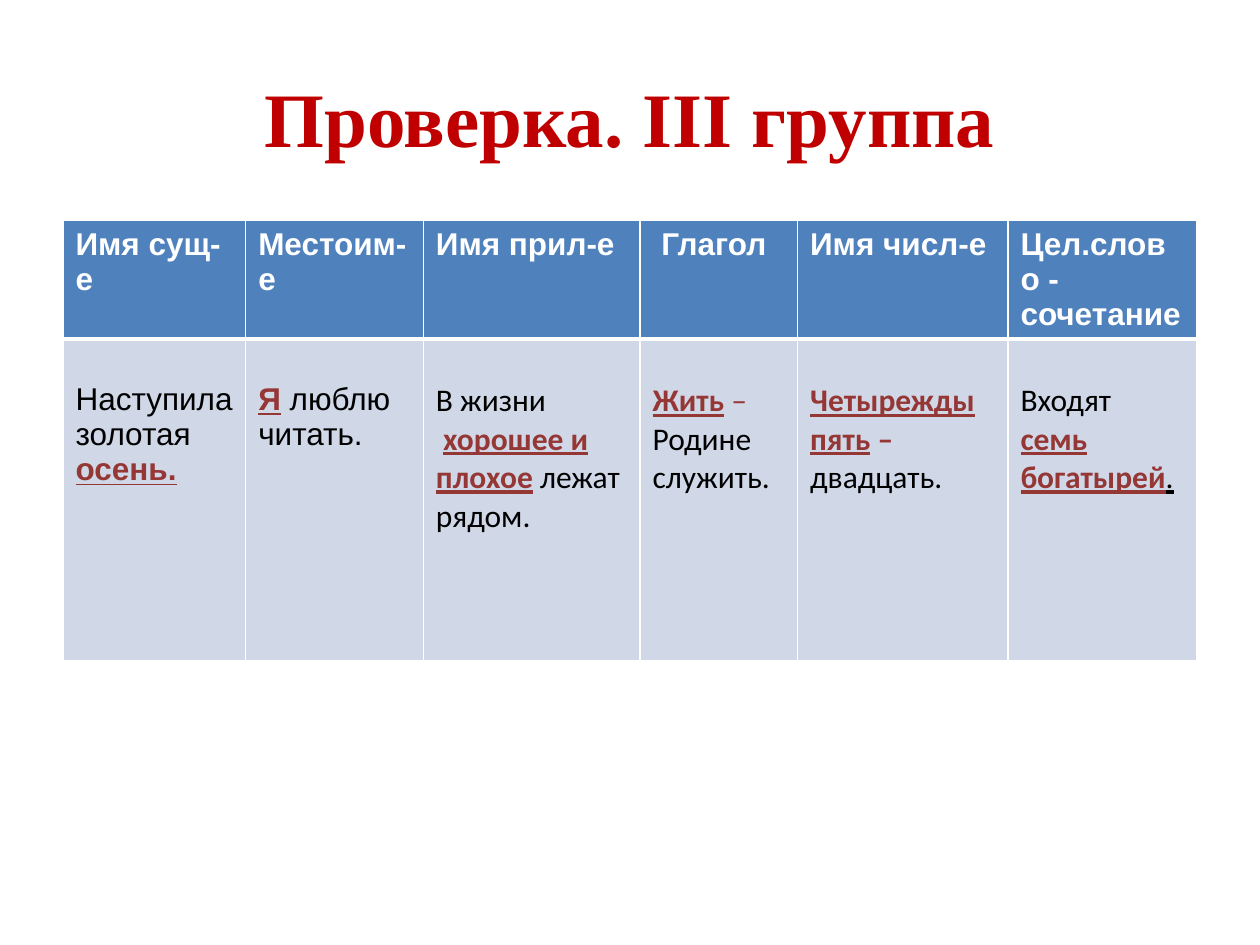
import pptx
import pptx.util
import pptx.dml.color
import pptx.enum.text
import pptx.oxml
import pptx.oxml.ns

RGB = pptx.dml.color.RGBColor
RED = RGB(0xC0, 0x00, 0x00)
BLUE = RGB(0x4F, 0x81, 0xBD)
PALE = RGB(0xD0, 0xD8, 0xE8)
WINE = RGB(0x95, 0x37, 0x35)
BLACK = RGB(0, 0, 0)
WHITE = RGB(0xFF, 0xFF, 0xFF)

PLAIN = dict(color=BLACK)
KEY = dict(color=WINE, bold=True, under=True)
BOLD = dict(color=WINE, bold=True)
THIN = dict(color=WINE)
LINE = dict(color=BLACK, under=True)

TITLE = "Проверка. III группа"
HEADS = ["Имя сущ-е", "Местоим-е", "Имя прил-е", " Глагол", "Имя числ-е",
         "Цел.слово -\nсочетание"]
BODY = [
    ("Arial", [("Наступила золотая ", PLAIN), ("осень.", KEY)]),
    ("Arial", [("Я", KEY), (" люблю читать.", PLAIN)]),
    ("Calibri", [("В жизни\n ", PLAIN), ("хорошее и плохое", KEY), (" лежат рядом.", PLAIN)]),
    ("Calibri", [("Жить", KEY), (" ", BOLD), ("– ", THIN), ("Родине служить.", PLAIN)]),
    ("Calibri", [("Четырежды пять", KEY), (" – ", BOLD), ("двадцать.", PLAIN)]),
    ("Calibri", [("Входят\n", PLAIN), ("семь богатырей", KEY), (".", LINE)]),
]
COLS = [1.45, 1.41, 1.72, 1.25, 1.67, 1.5]
ROWS = [0.94, 2.55]
LEFT, TOP, WIDTH = 0.5, 1.75, 9


def write(frame, text, font="Arial", size=18, color=BLACK, bold=False, under=False):
    """Add text to the last paragraph, starting a new one at each line break."""
    for num, part in enumerate(text.split("\n")):
        para = frame.add_paragraph() if num else frame.paragraphs[-1]
        if not part:
            continue
        run = para.add_run()
        run.text = part
        run.font.name = font
        run.font.size = pptx.util.Pt(size)
        run.font.color.rgb = color
        run.font.bold = bold
        run.font.underline = under


def paint(cell, fill, top, base):
    """Fill a cell and draw its white borders."""
    cell.fill.solid()
    cell.fill.fore_color.rgb = fill
    props = cell._tc.get_or_add_tcPr()
    for spot, (side, width) in enumerate(zip("LRTB", (1, 1, top, base))):
        props.insert(spot, pptx.oxml.parse_xml(
            f'<a:ln{side} {pptx.oxml.ns.nsdecls("a")} w="{pptx.util.Pt(width)}">'
            f'<a:solidFill><a:srgbClr val="{WHITE}"/></a:solidFill></a:ln{side}>'))


def main():
    """Build the slide."""
    inch = pptx.util.Inches
    deck = pptx.Presentation()
    deck.slide_width, deck.slide_height = inch(10), inch(7.5)
    slide = deck.slides.add_slide(deck.slide_layouts[5])

    title = slide.shapes.title
    title.left, title.top = inch(LEFT), inch(0.3)
    title.width, title.height = inch(WIDTH), inch(1.25)
    frame = title.text_frame
    frame.vertical_anchor = pptx.enum.text.MSO_ANCHOR.MIDDLE
    frame.paragraphs[0].alignment = pptx.enum.text.PP_ALIGN.CENTER
    write(frame, TITLE, font="Times New Roman", size=44, color=RED, bold=True)

    table = slide.shapes.add_table(len(ROWS), len(COLS), inch(LEFT), inch(TOP),
                                   inch(WIDTH), inch(sum(ROWS))).table
    for row, high in zip(table.rows, ROWS):
        row.height = inch(high)
    for num, (wide, head, (font, runs)) in enumerate(zip(COLS, HEADS, BODY)):
        table.columns[num].width = inch(wide)
        cell = table.cell(0, num)
        paint(cell, BLUE, 1, 3)
        write(cell.text_frame, head, color=WHITE, bold=True)
        cell = table.cell(1, num)
        paint(cell, PALE, 3, 1)
        cell.margin_top = inch(0.34)
        for text, style in runs:
            write(cell.text_frame, text, font=font, **style)

    deck.save("out.pptx")


if __name__ == "__main__":
    main()
